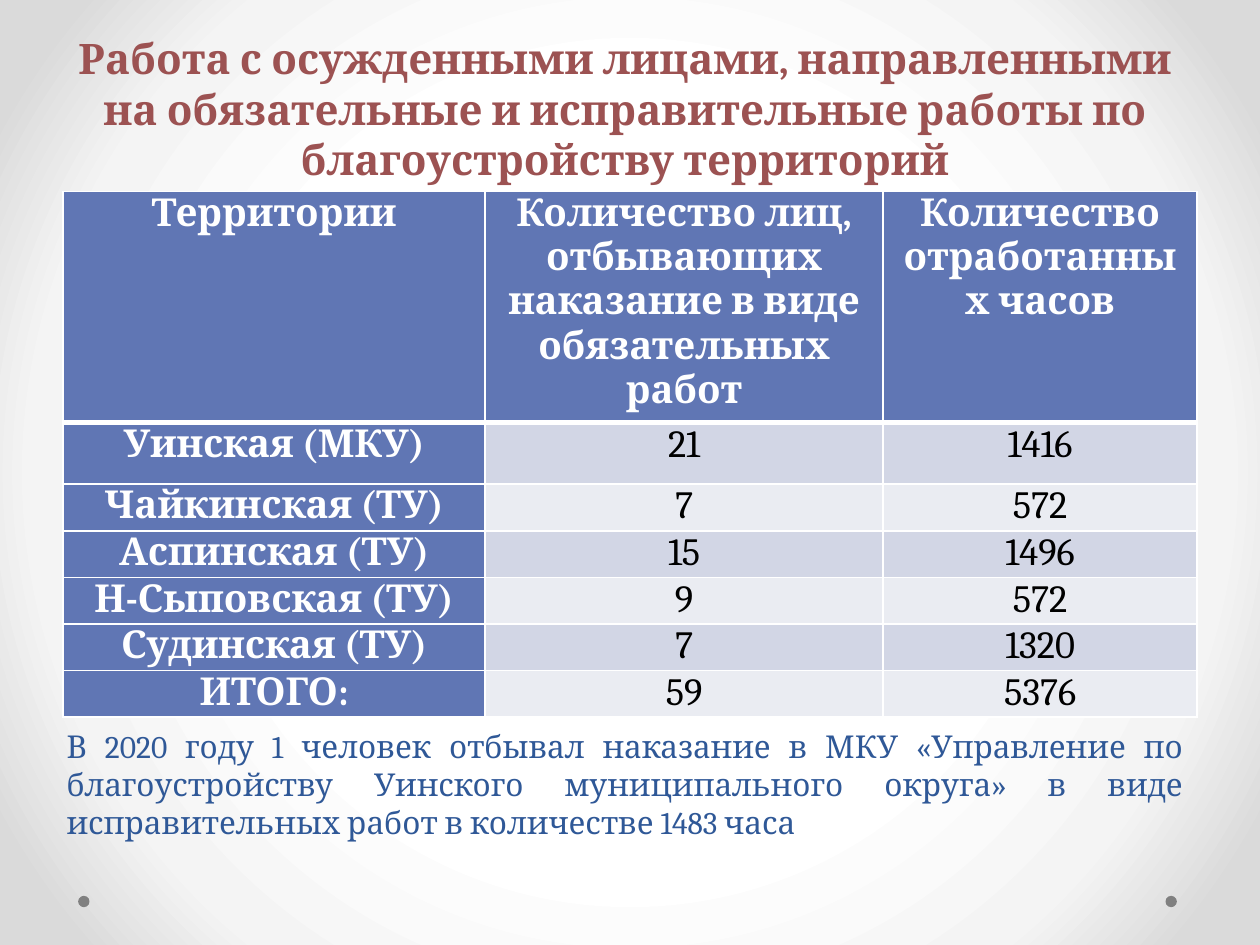
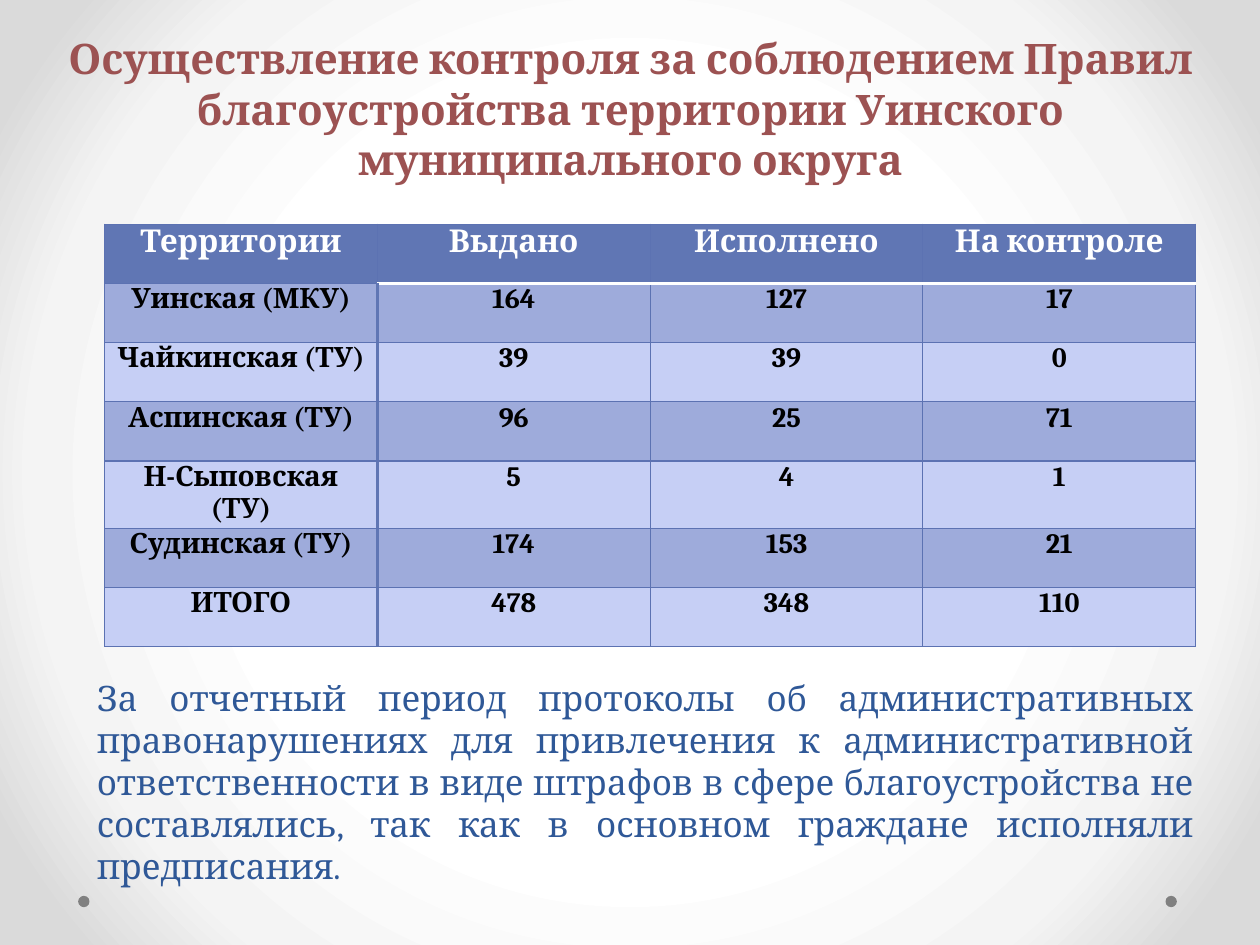
from pptx import Presentation
from pptx.dml.color import RGBColor
from pptx.enum.shapes import MSO_SHAPE as Shape
from pptx.enum.text import MSO_ANCHOR as Anchor, MSO_AUTO_SIZE as Fit, PP_ALIGN as Align
from pptx.oxml import parse_xml
from pptx.oxml.ns import nsdecls, qn
from pptx.util import Inches, Pt

FONT = "Cambria"
RED = RGBColor(0x9C, 0x52, 0x52)
NAVY = RGBColor(0x2F, 0x58, 0x97)
BLUE = RGBColor(0x60, 0x76, 0xB4)
LINE = RGBColor(0x5C, 0x72, 0xB2)
WHITE = RGBColor(0xFF, 0xFF, 0xFF)
BLACK = RGBColor(0, 0, 0)
GREY = RGBColor(0x80, 0x80, 0x80)
PALE = (RGBColor(0xD2, 0xD6, 0xE5), RGBColor(0xEA, 0xEC, 0xF2))
SKY = (RGBColor(0x9E, 0xAB, 0xDB), RGBColor(0xC6, 0xCF, 0xF5))
GLOW = ((50, "FFFFFF"), (76, "F4F4F4"), (92, "DADADA"))
SIDES = ("lnL", "lnR", "lnT", "lnB")

WORK = [
    ("Территории", "Количество лиц, отбывающих наказание в виде обязательных работ",
     "Количество отработанных часов"),
    ("Уинская (МКУ)", "21", "1416"),
    ("Чайкинская (ТУ)", "7", "572"),
    ("Аспинская (ТУ)", "15", "1496"),
    ("Н-Сыповская (ТУ)", "9", "572"),
    ("Судинская (ТУ)", "7", "1320"),
    ("ИТОГО:", "59", "5376"),
]
ORDERS = [
    ("Территории", "Выдано", "Исполнено", "На контроле"),
    ("Уинская (МКУ)", "164", "127", "17"),
    ("Чайкинская (ТУ)", "39", "39", "0"),
    ("Аспинская (ТУ)", "96", "25", "71"),
    ("Н-Сыповская (ТУ)", "5", "4", "1"),
    ("Судинская (ТУ)", "174", "153", "21"),
    ("ИТОГО", "478", "348", "110"),
]


def put_text(frame, text, size=18, color=BLACK, bold=False, align=Align.CENTER):
    frame.word_wrap = True
    par = frame.paragraphs[0]
    par.alignment = align
    run = par.add_run()
    run.text = text
    font = run.font
    font.name, font.size, font.bold = FONT, Pt(size), bold
    font.color.rgb = color


def set_glow(master):
    """Give the master a radial backdrop, light in the middle."""
    stops = "".join(f'<a:gs pos="{pos * 1000}"><a:srgbClr val="{tone}"/></a:gs>'
                    for pos, tone in GLOW)
    master.background.fill.solid()
    back = master.element.cSld.find(qn("p:bg")).find(qn("p:bgPr"))
    back.replace(back[0], parse_xml(
        f'<a:gradFill {nsdecls("a")} rotWithShape="1"><a:gsLst>{stops}</a:gsLst>'
        '<a:path path="circle"><a:fillToRect l="50000" t="50000" r="50000" b="50000"/>'
        '</a:path></a:gradFill>'))


def add_dots(slide):
    for left in (9.25, 0.62):
        dot = slide.shapes.add_shape(Shape.OVAL, Inches(left), Inches(7.11),
                                     Inches(0.09), Inches(0.09))
        dot.shadow.inherit = False
        dot.fill.solid()
        dot.fill.fore_color.rgb = GREY
        dot.line.fill.background()


def add_title(slide, text, left, width):
    title = slide.shapes.title
    title.left, title.top = Inches(left), Inches(0.21)
    title.width, title.height = Inches(width), Inches(1.31)
    frame = title.text_frame
    frame.vertical_anchor = Anchor.TOP
    frame.auto_size = Fit.SHAPE_TO_FIT_TEXT
    put_text(frame, text, size=24, color=RED, bold=True)


def add_note(slide, text, box, size):
    frame = slide.shapes.add_textbox(*map(Inches, box)).text_frame
    frame.auto_size = Fit.SHAPE_TO_FIT_TEXT
    put_text(frame, text, size=size, color=NAVY, align=Align.JUSTIFY)


def set_edge(cell, side, color, width):
    props = cell._tc.get_or_add_tcPr()
    edge = parse_xml(
        f'<a:{side} {nsdecls("a")} w="{Pt(width)}"><a:solidFill>'
        f'<a:srgbClr val="{color}"/></a:solidFill></a:{side}>')
    old = props.find(qn(f"a:{side}"))
    if old is None:
        props.insert(SIDES.index(side), edge)
    else:
        props.replace(old, edge)


def add_grid(slide, data, left, top, cols, rows, pad, line, width):
    """Place a table with a blue head row and return it."""
    table = slide.shapes.add_table(
        len(rows), len(cols), Inches(left), Inches(top),
        Inches(sum(cols)), Inches(sum(rows))).table
    table.horz_banding = False
    for col, size in zip(table.columns, cols):
        col.width = Inches(size)
    for row, size in zip(table.rows, rows):
        row.height = Inches(size)
    for cell in table.iter_cells():
        cell.margin_left = cell.margin_right = Inches(pad)
        cell.margin_top = cell.margin_bottom = 0
        for side in SIDES:
            set_edge(cell, side, line, width)
    return table


def fill_grid(table, data, style):
    """Write each cell in the (fill, text format) that style(row, col) gives."""
    for r, row in enumerate(data):
        for c, text in enumerate(row):
            cell = table.cell(r, c)
            fill, form = style(r, c)
            cell.fill.solid()
            cell.fill.fore_color.rgb = fill
            put_text(cell.text_frame, text, **form)


def rule_head(table, width, first=0):
    """Draw the white rule under the head row from column first on."""
    for c in range(first, len(table.columns)):
        set_edge(table.cell(0, c), "lnB", WHITE, width)
        set_edge(table.cell(1, c), "lnT", WHITE, width)


def work_style(r, c):
    if r == 0 or c == 0:
        return BLUE, dict(size=22, color=WHITE, bold=True)
    return PALE[(r - 1) % 2], dict(size=22)


def order_style(r, c):
    if r == 0:
        return BLUE, dict(size=18, color=WHITE, bold=True)
    return SKY[(r - 1) % 2], dict(size=16, bold=True)


def new_slide(deck):
    slide = deck.slides.add_slide(deck.slide_layouts[5])
    add_dots(slide)
    return slide


def work_slide(deck):
    slide = new_slide(deck)
    add_title(slide, "Работа с осужденными лицами, направленными на обязательные и "
              "исправительные работы по благоустройству территорий", 0.43, 9.06)
    table = add_grid(slide, WORK, 0.5, 1.52, [3.35, 3.16, 2.49],
                     [1.47, 0.49] + [0.37] * 5, 0.07, WHITE, 1)
    fill_grid(table, WORK, work_style)
    rule_head(table, 3)
    add_note(slide, "В 2020 году 1 человек отбывал наказание в МКУ «Управление по "
             "благоустройству Уинского муниципального округа» в виде исправительных "
             "работ в количестве 1483 часа", (0.43, 5.72, 9.06, 1.01), 18)


def order_slide(deck):
    slide = new_slide(deck)
    add_title(slide, "Осуществление контроля за соблюдением Правил благоустройства "
              "территории Уинского муниципального округа", 0.2, 9.61)
    add_note(slide, "За отчетный период протоколы об административных правонарушениях "
             "для привлечения к административной ответственности в виде штрафов в сфере "
             "благоустройства не составлялись, так как в основном граждане исполняли "
             "предписания.", (0.67, 5.32, 8.9, 1.78), 20)
    table = add_grid(slide, ORDERS, 0.83, 1.78, [8.66 / 4] * 4, [0.47] * 7,
                     0.05, LINE, 0.75)
    fill_grid(table, ORDERS, order_style)
    rule_head(table, 2.25, first=1)
    for r in range(1, len(ORDERS)):
        set_edge(table.cell(r, 0), "lnR", BLUE, 2.25)
        set_edge(table.cell(r, 1), "lnL", BLUE, 2.25)


def main():
    deck = Presentation()
    deck.slide_width, deck.slide_height = Inches(10), Inches(7.5)
    set_glow(deck.slide_master)
    work_slide(deck)
    order_slide(deck)
    deck.save("out.pptx")


if __name__ == "__main__":
    main()
